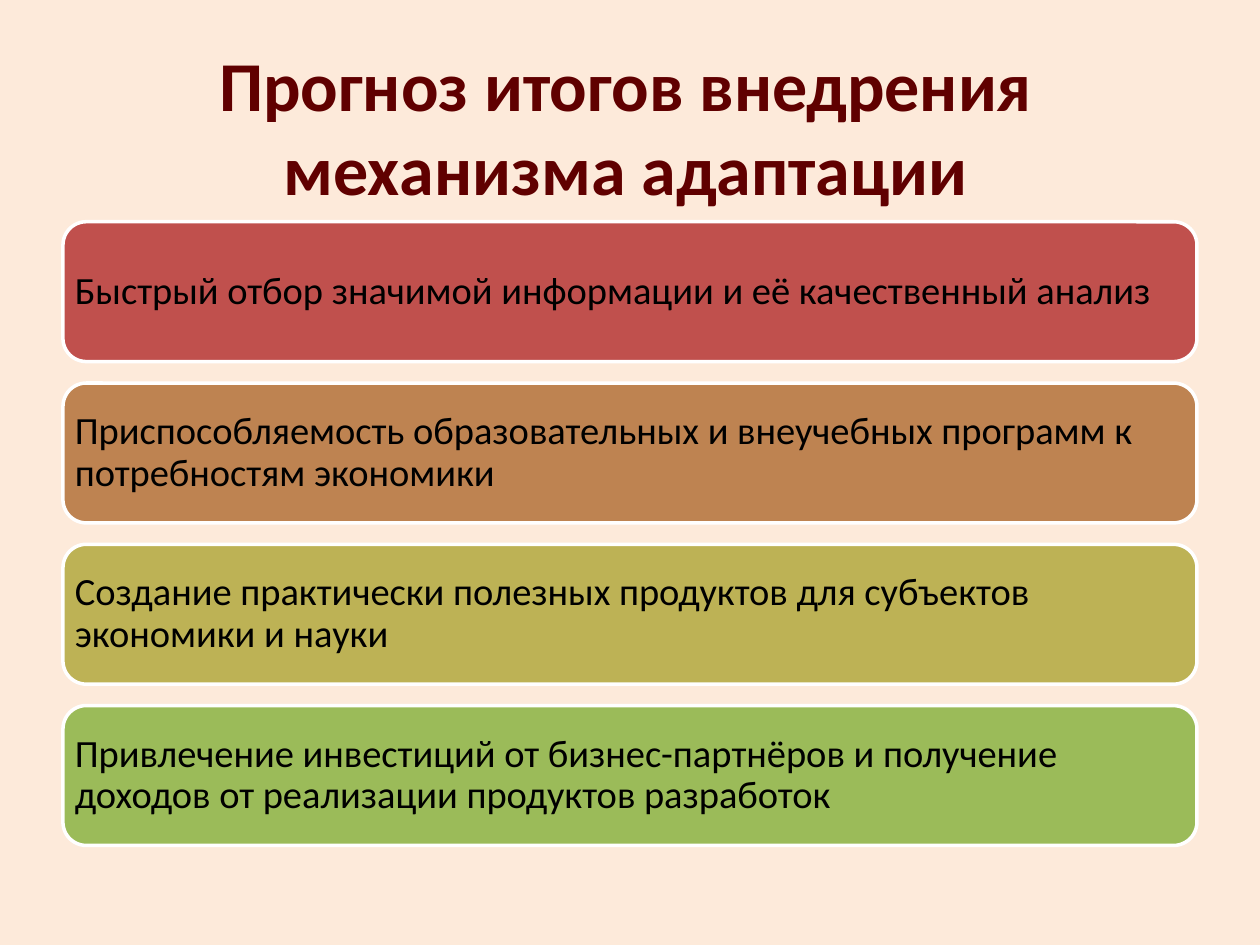
import pptx
import pptx.util
import pptx.dml.color
import pptx.enum.shapes
import pptx.enum.text

Inches, Pt = pptx.util.Inches, pptx.util.Pt
ALIGN = pptx.enum.text.PP_ALIGN

TITLE = "Прогноз итогов внедрения механизма адаптации"
OUTCOMES = [
    ("Быстрый отбор значимой информации и её качественный анализ", "C0504D"),
    ("Приспособляемость образовательных и внеучебных программ к "
     "потребностям экономики", "BE8351"),
    ("Создание практически полезных продуктов для субъектов "
     "экономики и науки", "BDB255"),
    ("Привлечение инвестиций от бизнес-партнёров и получение "
     "доходов от реализации продуктов разработок", "9BBB59"),
]

WIDTH, HEIGHT = 10, 7.5
MARGIN = WIDTH / 20
BAR_TOP, BAR_HEIGHT, BAR_PITCH = 1.76, 1.11, 1.28
TITLE_FONT = {"name": "Calibri", "size": Pt(40), "bold": True}
BAR_FONT = {"name": "Calibri", "size": Pt(22), "bold": False}


def color(value):
    return pptx.dml.color.RGBColor.from_string(value)


def set_values(target, values):
    for name, value in values.items():
        setattr(target, name, value)


def write(shape, text, font, font_color, align, spacing, inset):
    """Put one vertically centred paragraph in the shape."""
    frame = shape.text_frame
    set_values(frame, {
        "word_wrap": True,
        "vertical_anchor": pptx.enum.text.MSO_ANCHOR.MIDDLE,
        "margin_left": Inches(inset), "margin_right": Inches(inset),
    })
    para = frame.paragraphs[0]
    set_values(para, {"alignment": align, "line_spacing": spacing})
    span = para.add_run()
    span.text = text
    set_values(span.font, font)
    span.font.color.rgb = color(font_color)


def add_bar(page, row, text, fill):
    bar = page.shapes.add_shape(
        pptx.enum.shapes.MSO_SHAPE.ROUNDED_RECTANGLE,
        Inches(MARGIN), Inches(BAR_TOP + row * BAR_PITCH),
        Inches(WIDTH - 2 * MARGIN), Inches(BAR_HEIGHT))
    bar.shadow.inherit = False
    bar.fill.solid()
    bar.fill.fore_color.rgb = color(fill)
    bar.line.color.rgb = color("FFFFFF")
    bar.line.width = Pt(2)
    write(bar, text, BAR_FONT, "000000", ALIGN.LEFT, 0.9, 0.04)


def main():
    deck = pptx.Presentation()
    set_values(deck, {"slide_width": Inches(WIDTH),
                      "slide_height": Inches(HEIGHT)})
    page = deck.slides.add_slide(deck.slide_layouts[6])
    page.background.fill.solid()
    page.background.fill.fore_color.rgb = color("FDEADA")

    title = page.shapes.add_textbox(
        Inches(0.43), Inches(0.37), Inches(9.07), Inches(1.25))
    write(title, TITLE, TITLE_FONT, "600000", ALIGN.CENTER, 1.0, 0.1)

    for row, (text, fill) in enumerate(OUTCOMES):
        add_bar(page, row, text, fill)
    deck.save("out.pptx")


if __name__ == "__main__":
    main()
